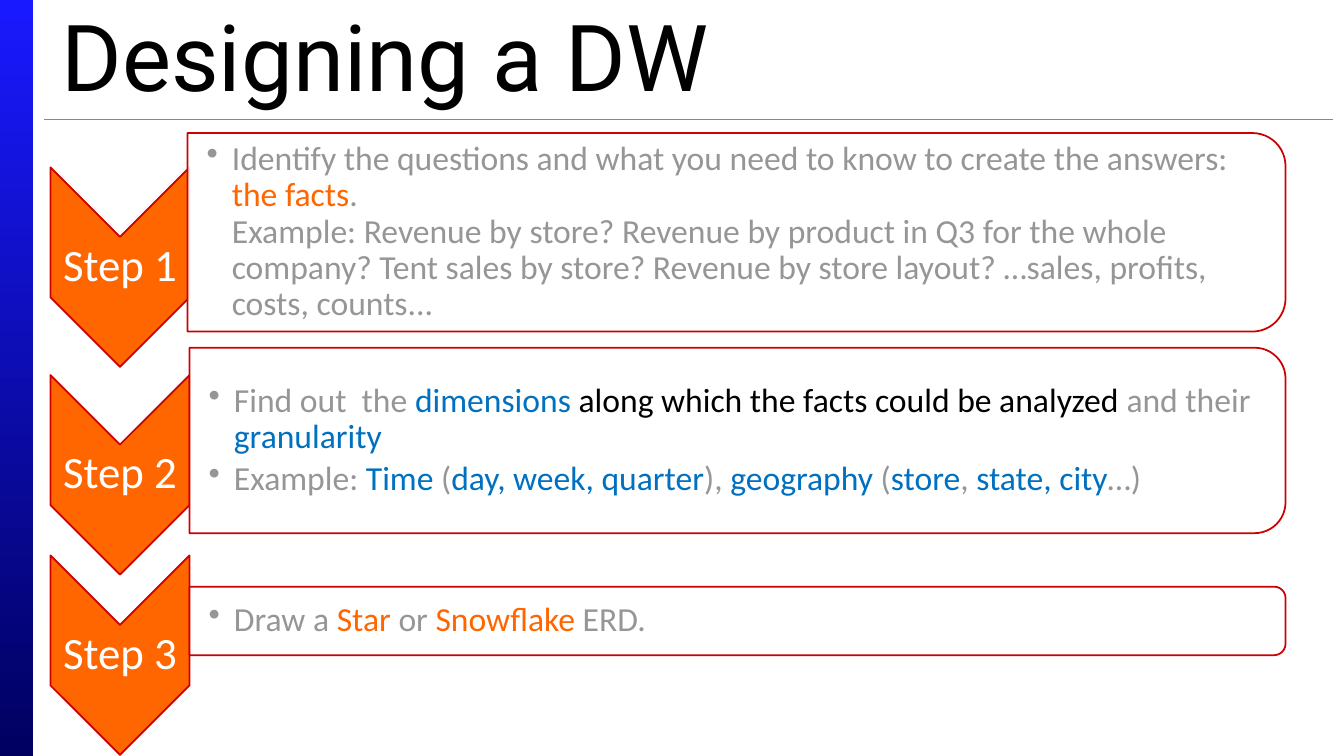
from lxml import etree
from pptx import Presentation, util as u
from pptx.dml.color import RGBColor
from pptx.enum import shapes, text
from pptx.oxml.ns import qn

COLOURS = {
    "white": "FFFFFF", "black": "000000", "grey": "969696", "blue": "0070C0",
    "orange": "FF6600", "red": "CC0000", "bar_top": "1919FF", "bar_foot": "000060",
}
WIDTH, HEIGHT = 13.33, 7.5
# Columns of the slide: side bar, step arrows, panels
BAR_W = 0.33
ARROW_X, ARROW_W, ARROW_H = 0.5, 1.38, 1.98
PANEL_RIGHT = 12.75
INSET = 0.02

# Each step: arrow top, panel box (left, top, height), paragraphs of (words, colour)
STEPS = [
    (1.66, (1.86, 1.32, 1.97), [
        [("Identify the questions and what you need to know to create the answers: ", "grey"),
         ("the facts", "orange"),
         (".\nExample: Revenue by store? Revenue by product in Q3 for the whole company? "
          "Tent sales by store? Revenue by store layout? …sales, profits, costs, counts...", "grey")],
    ]),
    (3.72, (1.88, 3.45, 1.84), [
        [("Find out  the ", "grey"), ("dimensions ", "blue"),
         ("along which the facts could be analyzed ", "black"),
         ("and their ", "grey"), ("granularity", "blue")],
        [("Example: ", "grey"), ("Time", "blue"), (" (", "grey"),
         ("day, week, quarter", "blue"), ("), ", "grey"), ("geography", "blue"),
         (" (", "grey"), ("store", "blue"), (", ", "grey"),
         ("state, city", "blue"), ("…)", "grey")],
    ]),
    (5.51, (1.88, 5.82, 0.68), [
        [("Draw a ", "grey"), ("Star", "orange"), (" or ", "grey"),
         ("Snowflake", "orange"), (" ERD.", "grey")],
    ]),
]


def rgb(name):
    return RGBColor.from_string(COLOURS[name])


def inches(*lengths):
    return [u.Inches(length) for length in lengths]


def write(frame, paragraphs, size, font="Calibri", align=text.PP_ALIGN.LEFT,
          spacing=None, after=0, bullet=False, insets=None):
    """Fill a text frame with paragraphs of (words, colour) pieces."""
    frame.word_wrap = True
    frame.auto_size = text.MSO_AUTO_SIZE.NONE
    frame.vertical_anchor = text.MSO_ANCHOR.MIDDLE
    if insets:
        (frame.margin_left, frame.margin_top,
         frame.margin_right, frame.margin_bottom) = inches(*insets)
    for number, pieces in enumerate(paragraphs):
        para = frame.add_paragraph() if number else frame.paragraphs[0]
        para.alignment = align
        para.space_after = u.Pt(after)
        if spacing:
            para.line_spacing = spacing
        if bullet:
            props = para._p.get_or_add_pPr()
            props.set("marL", str(u.Inches(0.25)))
            props.set("indent", str(u.Inches(-0.25)))
            etree.SubElement(props, qn("a:buChar")).set("char", "•")
        for words, colour in pieces:
            for row, line in enumerate(words.split("\n")):
                if row:
                    para.add_line_break()
                run = para.add_run()
                run.text = line
                run.font.name, run.font.size = font, u.Pt(size)
                run.font.color.rgb = rgb(colour)


def add_turned(slide, kind, left, top, width, height, fill):
    """Add an outlined shape that fills the given box after a quarter turn."""
    shape = slide.shapes.add_shape(
        kind, *inches(left + (width - height) / 2, top + (height - width) / 2, height, width))
    shape.rotation = 90
    shape.shadow.inherit = False
    shape.fill.solid()
    shape.fill.fore_color.rgb = rgb(fill)
    shape.line.color.rgb = rgb("red")
    shape.line.width = u.Pt(1.25)
    return shape


def add_frame(slide):
    # Side bar, with its gradient running downwards
    bar = slide.shapes.add_shape(shapes.MSO_SHAPE.RECTANGLE, *inches(0, 0, BAR_W, HEIGHT))
    bar.shadow.inherit = False
    bar.line.fill.background()
    bar.fill.gradient()
    bar.fill.gradient_angle = 270
    for stop, colour in zip(bar.fill.gradient_stops, ("bar_top", "bar_foot")):
        stop.color.rgb = rgb(colour)
    # Rule under the title
    rule = slide.shapes.add_connector(
        shapes.MSO_CONNECTOR.STRAIGHT, *inches(0.44, 1.19, 13.22, 1.19))
    rule.line.color.rgb = rgb("orange")
    rule.line.width = u.Pt(0.75)
    etree.SubElement(rule._element.spPr, qn("a:effectLst"))


def add_title(slide, words):
    title = slide.shapes.title
    title.left, title.top, title.width, title.height = inches(0.51, 0.19, 12.78, 0.71)
    write(title.text_frame, [[(words, "black")]], 66, font="Roboto")


def add_arrow(slide, top, words):
    add_turned(slide, shapes.MSO_SHAPE.CHEVRON, ARROW_X, top, ARROW_W, ARROW_H, "orange")
    label = slide.shapes.add_textbox(*inches(ARROW_X, top + ARROW_W / 2, ARROW_W, 0.59))
    write(label.text_frame, [[(words, "white")]], 32, align=text.PP_ALIGN.CENTER,
          spacing=0.9, insets=[INSET] * 4)


def add_panel(slide, left, top, height, paragraphs):
    width = PANEL_RIGHT - left
    panel = add_turned(slide, shapes.MSO_SHAPE.ROUND_2_SAME_RECTANGLE,
                       left, top, width, height, "white")
    # Slightly see-through fill
    colour = panel._element.spPr.find(qn("a:solidFill"))[0]
    etree.SubElement(colour, qn("a:alpha")).set("val", "90000")
    body = slide.shapes.add_textbox(*inches(left, top, width - 0.09, height))
    write(body.text_frame, paragraphs, 24, spacing=0.9, after=4, bullet=True,
          insets=(0.19, INSET, INSET, INSET))


def main():
    deck = Presentation()
    deck.slide_width, deck.slide_height = inches(WIDTH, HEIGHT)
    slide = deck.slides.add_slide(deck.slide_layouts[5])
    add_frame(slide)
    add_title(slide, "Designing a DW")
    for number, (arrow_top, panel_box, paragraphs) in enumerate(STEPS, 1):
        add_arrow(slide, arrow_top, f"Step {number}")
        add_panel(slide, *panel_box, paragraphs)
    deck.save("out.pptx")


if __name__ == "__main__":
    main()
